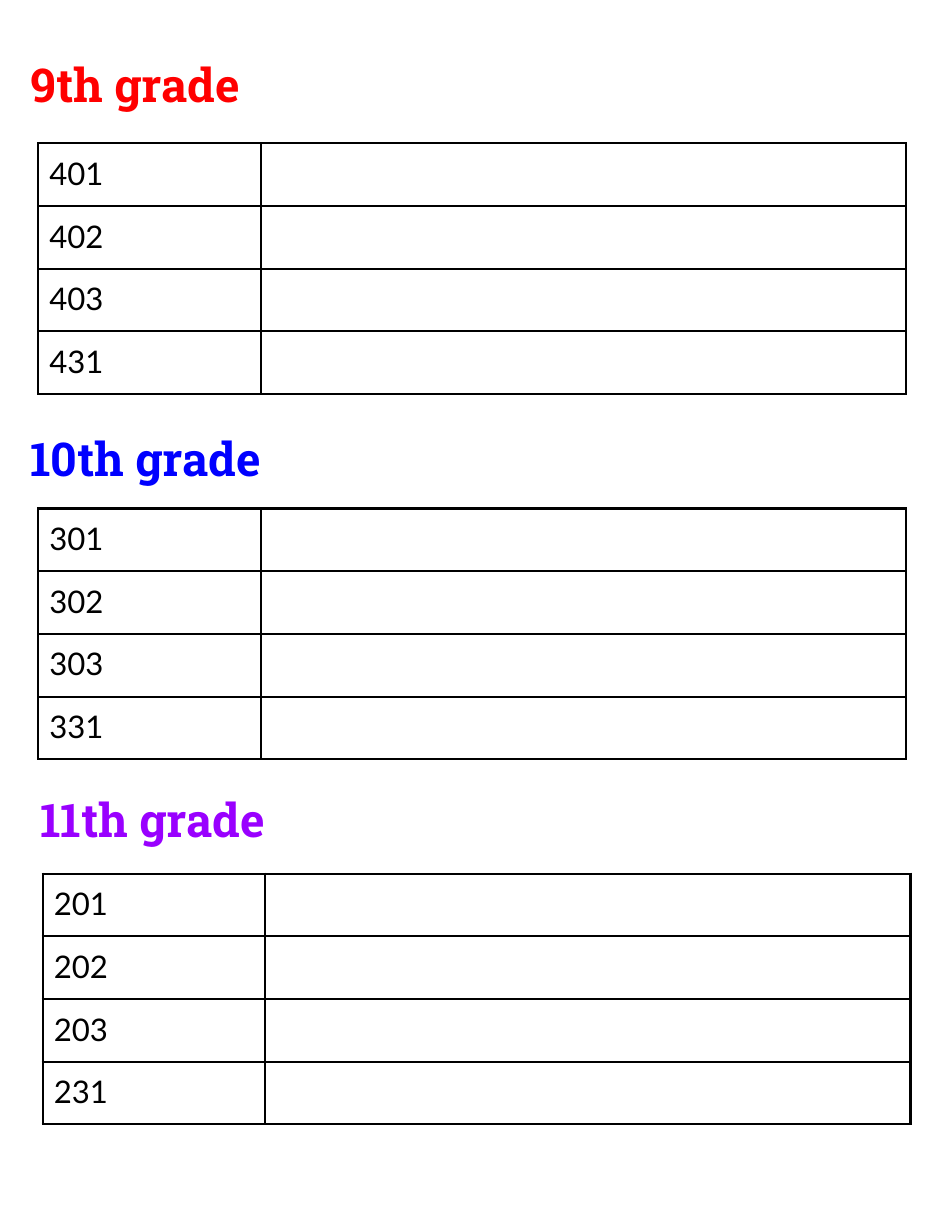
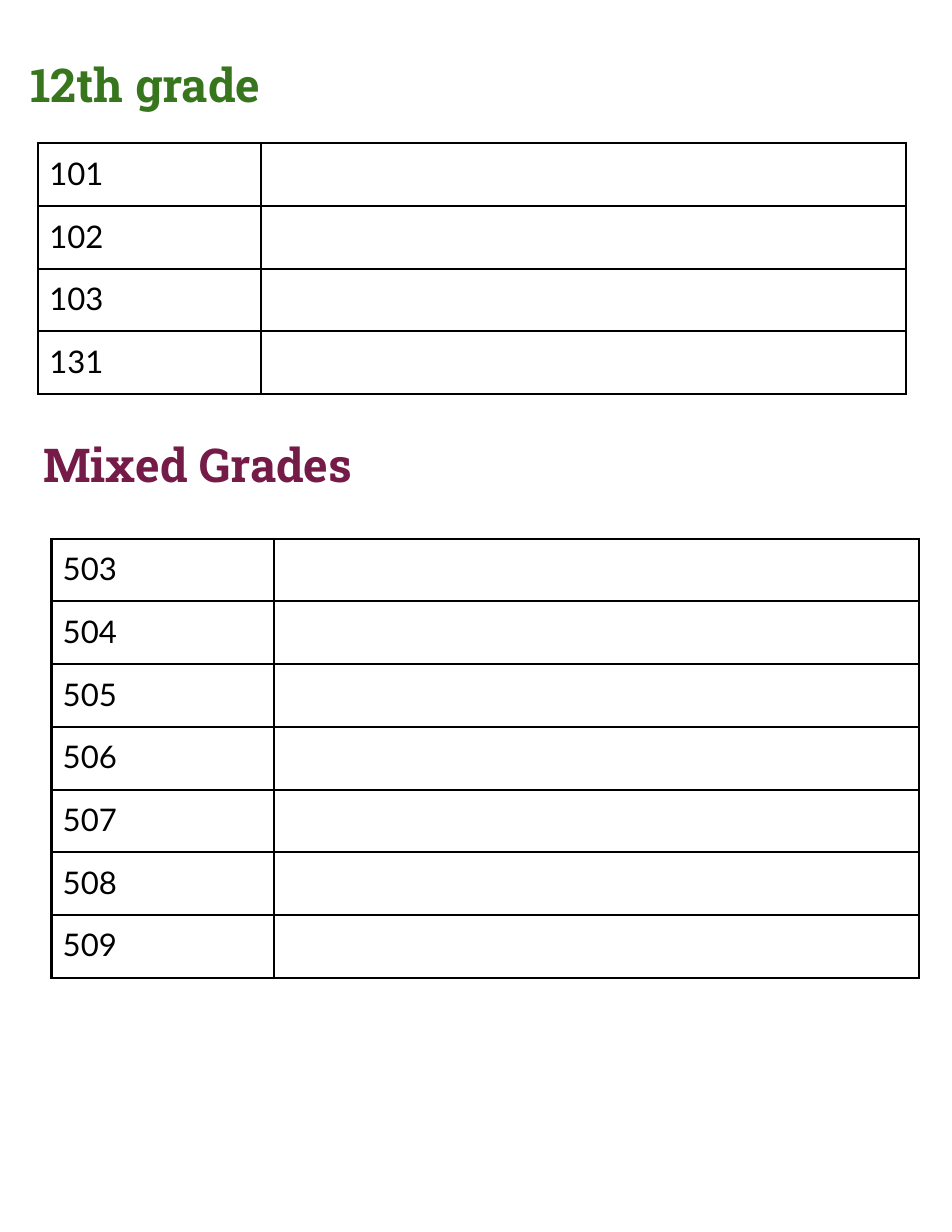
from lxml import etree
from pptx import Presentation
from pptx.dml.color import RGBColor
from pptx.enum.text import MSO_ANCHOR, MSO_AUTO_SIZE, PP_ALIGN
from pptx.oxml.ns import qn
from pptx.util import Inches, Pt

RED = RGBColor(0xFF, 0x00, 0x00)
BLUE = RGBColor(0x00, 0x00, 0xFF)
PURPLE = RGBColor(0x99, 0x00, 0xFF)
GREEN = RGBColor(0x38, 0x76, 0x1D)
PLUM = RGBColor(0x74, 0x1B, 0x47)
BLACK = RGBColor(0x00, 0x00, 0x00)

# Each section: heading, colour, heading (left, top), table (left, top), rooms
SLIDES = [
    [
        ("9th grade", RED, (0.17, 0.4), (0.34, 1.28), [401, 402, 403, 431]),
        ("10th grade", BLUE, (0.17, 3.74), (0.34, 4.54), [301, 302, 303, 331]),
        ("11th grade", PURPLE, (0.26, 6.96), (0.38, 7.8), [201, 202, 203, 231]),
    ],
    [
        ("12th grade", GREEN, (0.17, 0.4), (0.34, 1.28), [101, 102, 103, 131]),
        ("Mixed Grades", PLUM, (0.29, 3.79), (0.46, 4.81), range(503, 510)),
    ],
]

HEADING_SIZE = (7.92, 1.22)
COLUMN_WIDTHS = (1.99, 5.76)
ROW_HEIGHT = 0.56
BORDER = Pt(1.5)
HEADING_FONT = {"name": "Roboto Slab", "size": Pt(30), "bold": True}
ROOM_FONT = {"name": "Lato", "size": Pt(20), "bold": False}
MARGINS = {f"margin_{side}": Inches(0.1) for side in ("left", "right", "top", "bottom")}
HEADING_FRAME = {**MARGINS, "word_wrap": True, "auto_size": MSO_AUTO_SIZE.NONE,
                 "vertical_anchor": MSO_ANCHOR.TOP}
CELL_FORMAT = {**MARGINS, "vertical_anchor": MSO_ANCHOR.TOP}
PLAIN_TABLE = {"first_row": False, "horz_banding": False}


def set_all(target, values):
    for name, value in values.items():
        setattr(target, name, value)


def write(tf, text, font, color):
    p = tf.paragraphs[0]
    p.alignment = PP_ALIGN.LEFT
    r = p.add_run()
    r.text = text
    set_all(r.font, font)
    r.font.color.rgb = color


def add_heading(slide, text, color, position):
    """Fill the title placeholder first, then use text boxes for later headings."""
    box = [Inches(v) for v in position + HEADING_SIZE]
    title = slide.shapes.title
    if title.has_text_frame and not title.text_frame.text:
        sp = title
        set_all(sp, dict(zip(("left", "top", "width", "height"), box)))
    else:
        sp = slide.shapes.add_textbox(*box)
    set_all(sp.text_frame, HEADING_FRAME)
    write(sp.text_frame, text, HEADING_FONT, color)


def add_borders(cell):
    tc_pr = cell._tc.get_or_add_tcPr()
    for i, tag in enumerate(("a:lnL", "a:lnR", "a:lnT", "a:lnB")):
        ln = etree.Element(qn(tag), w=str(BORDER))
        fill = etree.SubElement(ln, qn("a:solidFill"))
        etree.SubElement(fill, qn("a:srgbClr"), val=str(BLACK))
        tc_pr.insert(i, ln)


def add_room_table(slide, position, rooms):
    left, top = position
    table = slide.shapes.add_table(
        len(rooms), len(COLUMN_WIDTHS), Inches(left), Inches(top),
        Inches(sum(COLUMN_WIDTHS)), Inches(ROW_HEIGHT * len(rooms))).table
    set_all(table, PLAIN_TABLE)
    for column, width in zip(table.columns, COLUMN_WIDTHS):
        column.width = Inches(width)
    for row, room in zip(table.rows, rooms):
        row.height = Inches(ROW_HEIGHT)
        for cell in row.cells:
            set_all(cell, CELL_FORMAT)
            cell.fill.background()
            add_borders(cell)
        write(row.cells[0].text_frame, str(room), ROOM_FONT, BLACK)


def main():
    prs = Presentation()
    prs.slide_width, prs.slide_height = Inches(8.5), Inches(11)
    title_only = prs.slide_layouts[5]
    for sections in SLIDES:
        slide = prs.slides.add_slide(title_only)
        for heading, color, heading_at, table_at, rooms in sections:
            add_heading(slide, heading, color, heading_at)
            add_room_table(slide, table_at, rooms)
    prs.save("out.pptx")


if __name__ == "__main__":
    main()
